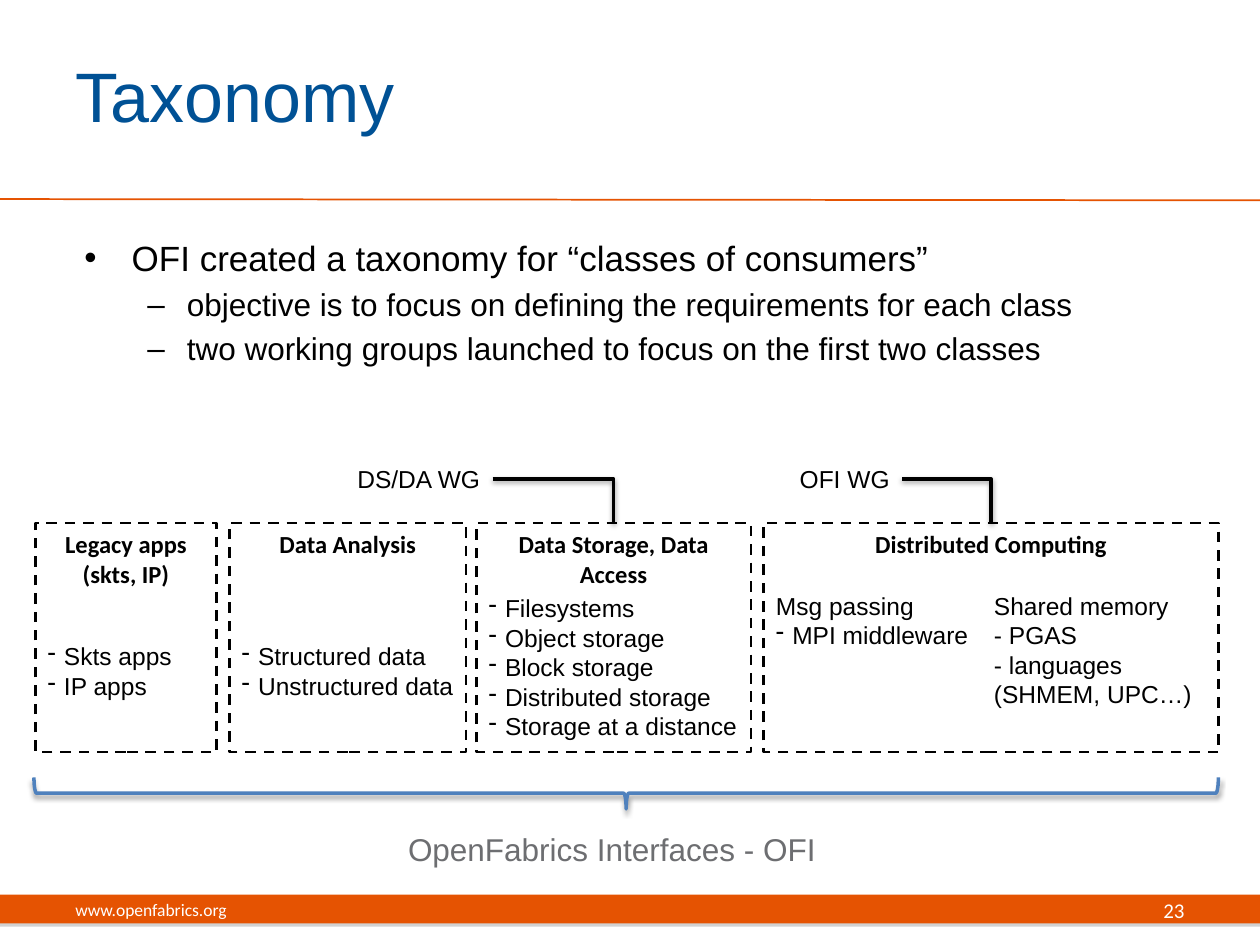
from lxml import etree
from pptx import Presentation
from pptx.dml.color import RGBColor
from pptx.enum.dml import MSO_LINE
from pptx.enum.shapes import MSO_CONNECTOR, MSO_SHAPE
from pptx.enum.text import MSO_ANCHOR, MSO_AUTO_SIZE, PP_ALIGN
from pptx.oxml.ns import qn
from pptx.util import Inches, Pt

LEFT, CENTER, RIGHT = PP_ALIGN.LEFT, PP_ALIGN.CENTER, PP_ALIGN.RIGHT
TOP, MIDDLE = MSO_ANCHOR.TOP, MSO_ANCHOR.MIDDLE
NO_FIT = MSO_AUTO_SIZE.NONE
RECTANGLE, BRACE = MSO_SHAPE.RECTANGLE, MSO_SHAPE.LEFT_BRACE
STRAIGHT, ELBOW = MSO_CONNECTOR.STRAIGHT, MSO_CONNECTOR.ELBOW
DASH = MSO_LINE.DASH

BLACK = RGBColor(0x00, 0x00, 0x00)
WHITE = RGBColor(0xFF, 0xFF, 0xFF)
ORANGE = RGBColor(0xE5, 0x53, 0x02)
NAVY = RGBColor(0x00, 0x51, 0x95)
BLUE = RGBColor(0x4F, 0x81, 0xBD)
GRAY = RGBColor(0x6D, 0x6E, 0x71)
SHADOW_GRAY = RGBColor(0x80, 0x80, 0x80)

SLIDE_WIDTH, SLIDE_HEIGHT = Inches(10), Inches(7.5)
COLUMNS, ROWS = 10, 7.5
CLASS_TOP, CLASS_HEIGHT = 4.15, 1.82
WG_ROW = 3.8

CLASSES = [
    ("Legacy apps (skts, IP)", 0.28, 1.44),
    ("Data Analysis", 1.82, 1.88),
    ("Data Storage, Data Access", 3.78, 2.18),
    ("Distributed Computing", 6.06, 3.61),
]
EXAMPLES = [
    ((0.28, 5.04, 1.44, 0.57), [], ["Skts apps", "IP apps"]),
    ((1.82, 5.04, 1.88, 0.81), [], ["Structured data", "Unstructured data"]),
    ((3.78, 4.66, 2.18, 1.28), [],
     ["Filesystems", "Object storage", "Block storage",
      "Distributed storage", "Storage at a distance"]),
    ((6.06, 4.64, 1.79, 0.57), ["Msg passing"], ["MPI middleware"]),
    ((7.79, 4.64, 1.98, 1.04),
     ["Shared memory", "- PGAS", "- languages (SHMEM, UPC…)"], []),
]
WORKING_GROUPS = [("DS/DA WG", 2.68, 1.23, 2), ("OFI WG", 6.18, 0.98, 3)]
POINTS = [
    ("OFI created a taxonomy for “classes of consumers”", 0, 20),
    ("objective is to focus on defining the requirements for each class", 1, 18),
    ("two working groups launched to focus on the first two classes", 1, 18),
]


def across(columns):
    return round(SLIDE_WIDTH * columns / COLUMNS)


def down(rows):
    return round(SLIDE_HEIGHT * rows / ROWS)


def area(left, top, width, height):
    return across(left), down(top), across(width), down(height)


def style(paragraph, size, color, font="Arial", bold=False, align=LEFT):
    paragraph.alignment = align
    paragraph.font.size = Pt(size)
    paragraph.font.name = font
    paragraph.font.bold = bold
    paragraph.font.color.rgb = color


def add_shadow(element, color=BLACK, alpha=38, blur=3.1, distance=1.6):
    properties = element._element.spPr
    for old in properties.findall(qn("a:effectLst")):
        properties.remove(old)
    effects = etree.SubElement(properties, qn("a:effectLst"))
    if alpha:
        outer = etree.SubElement(
            effects, qn("a:outerShdw"), blurRad=str(Pt(blur)),
            dist=str(Pt(distance)), dir="5400000", rotWithShape="0")
        tone = etree.SubElement(outer, qn("a:srgbClr"), val=str(color))
        etree.SubElement(tone, qn("a:alpha"), val=str(alpha * 1000))


def add_dash_bullet(paragraph):
    properties = paragraph._p.get_or_add_pPr()
    properties.set("marL", str(Inches(0.13)))
    properties.set("indent", str(-Inches(0.13)))
    etree.SubElement(properties, qn("a:buChar"), char="-")


def add_label(slide, place, text, size, color, font="Arial", align=LEFT,
              anchor=TOP, wrap=True):
    frame = slide.shapes.add_textbox(*area(*place)).text_frame
    frame.word_wrap = wrap
    frame.vertical_anchor = anchor
    frame.text = text
    for paragraph in frame.paragraphs:
        style(paragraph, size, color, font, align=align)
    return frame


def add_examples(slide, place, plain, dashed):
    frame = add_label(slide, place, "\n".join(plain + dashed), 14, BLACK)
    for paragraph in frame.paragraphs[len(plain):]:
        properties = paragraph._p.get_or_add_pPr()
        defaults = properties.find(qn("a:defRPr"))
        add_dash_bullet(paragraph)
        if defaults is not None:
            properties.append(defaults)


def add_class(slide, name, left, width):
    box = slide.shapes.add_shape(
        RECTANGLE, *area(left, CLASS_TOP, width, CLASS_HEIGHT))
    box.shadow.inherit = False
    box.fill.background()
    box.line.color.rgb = BLACK
    box.line.width = Pt(1.5)
    box.line.dash_style = DASH
    frame = box.text_frame
    frame.vertical_anchor = TOP
    frame.text = name
    style(frame.paragraphs[0], 14, BLACK, "Calibri", True, CENTER)


def add_line(slide, kind, start, end, color, width):
    line = slide.shapes.add_connector(
        kind, across(start[0]), down(start[1]), across(end[0]), down(end[1]))
    line.line.color.rgb = color
    line.line.width = Pt(width)
    return line


def add_working_group(slide, name, left, width, class_index):
    add_label(slide, (left, WG_ROW - 0.17, width, 0.34), name, 14, BLACK,
              align=RIGHT)
    _, class_left, class_width = CLASSES[class_index]
    link = add_line(slide, ELBOW, (left + width, WG_ROW),
                    (class_left + class_width / 2, CLASS_TOP), BLACK, 2)
    link._element.spPr.find(qn("a:prstGeom")).set("prst", "bentConnector2")
    add_shadow(link)


def add_brace(slide, left, top, span, depth):
    middle_x, middle_y = left + span / 2, top + depth / 2
    brace = slide.shapes.add_shape(
        BRACE, *area(middle_x - depth / 2, middle_y - span / 2, depth, span))
    brace.rotation = 270
    brace.fill.background()
    brace.line.color.rgb = BLUE
    brace.line.width = Pt(2)
    add_shadow(brace)


def add_frame(slide):
    band = slide.shapes.add_shape(RECTANGLE, *area(0, 7.1, COLUMNS, 0.23))
    band.fill.solid()
    band.fill.fore_color.rgb = ORANGE
    band.line.fill.background()
    add_shadow(band, SHADOW_GRAY, 35, 0, 1.8)
    rule = add_line(slide, STRAIGHT, (0, 1.58), (COLUMNS, 1.59), ORANGE, 1)
    add_shadow(rule, alpha=0)
    add_label(slide, (0.5, 7.02, 3.17, 0.4), "www.openfabrics.org", 10, WHITE,
              "Calibri", anchor=MIDDLE)
    add_label(slide, (7.17, 7.02, 2.33, 0.4), "23", 12, WHITE, "Calibri",
              RIGHT, MIDDLE)


def fill_placeholders(slide):
    title, body = slide.placeholders
    title.left, title.top, title.width, title.height = area(0.5, 0.25, 8.17, 1)
    title.text_frame.text = "Taxonomy"
    title.text_frame.vertical_anchor = MIDDLE
    style(title.text_frame.paragraphs[0], 40, NAVY)
    body.left, body.top, body.width, body.height = area(0.57, 1.83, 9, 1.17)
    frame = body.text_frame
    frame.text = "\n".join(text for text, _, _ in POINTS)
    frame.auto_size = NO_FIT
    for paragraph, (_, level, size) in zip(frame.paragraphs, POINTS):
        paragraph.level = level
        style(paragraph, size, BLACK)
    frame.paragraphs[0].space_before = Pt(0)


def main():
    deck = Presentation()
    deck.slide_width, deck.slide_height = SLIDE_WIDTH, SLIDE_HEIGHT
    slide = deck.slides.add_slide(deck.slide_layouts[1])
    fill_placeholders(slide)
    add_frame(slide)
    for consumer_class in CLASSES:
        add_class(slide, *consumer_class)
    for examples in EXAMPLES:
        add_examples(slide, *examples)
    for group in WORKING_GROUPS:
        add_working_group(slide, *group)
    add_brace(slide, 0.27, 6.17, 9.4, 0.25)
    add_label(slide, (3.14, 6.54, 3.47, 0.4), "OpenFabrics Interfaces - OFI",
              18, GRAY, wrap=False)
    deck.save("out.pptx")


if __name__ == "__main__":
    main()
